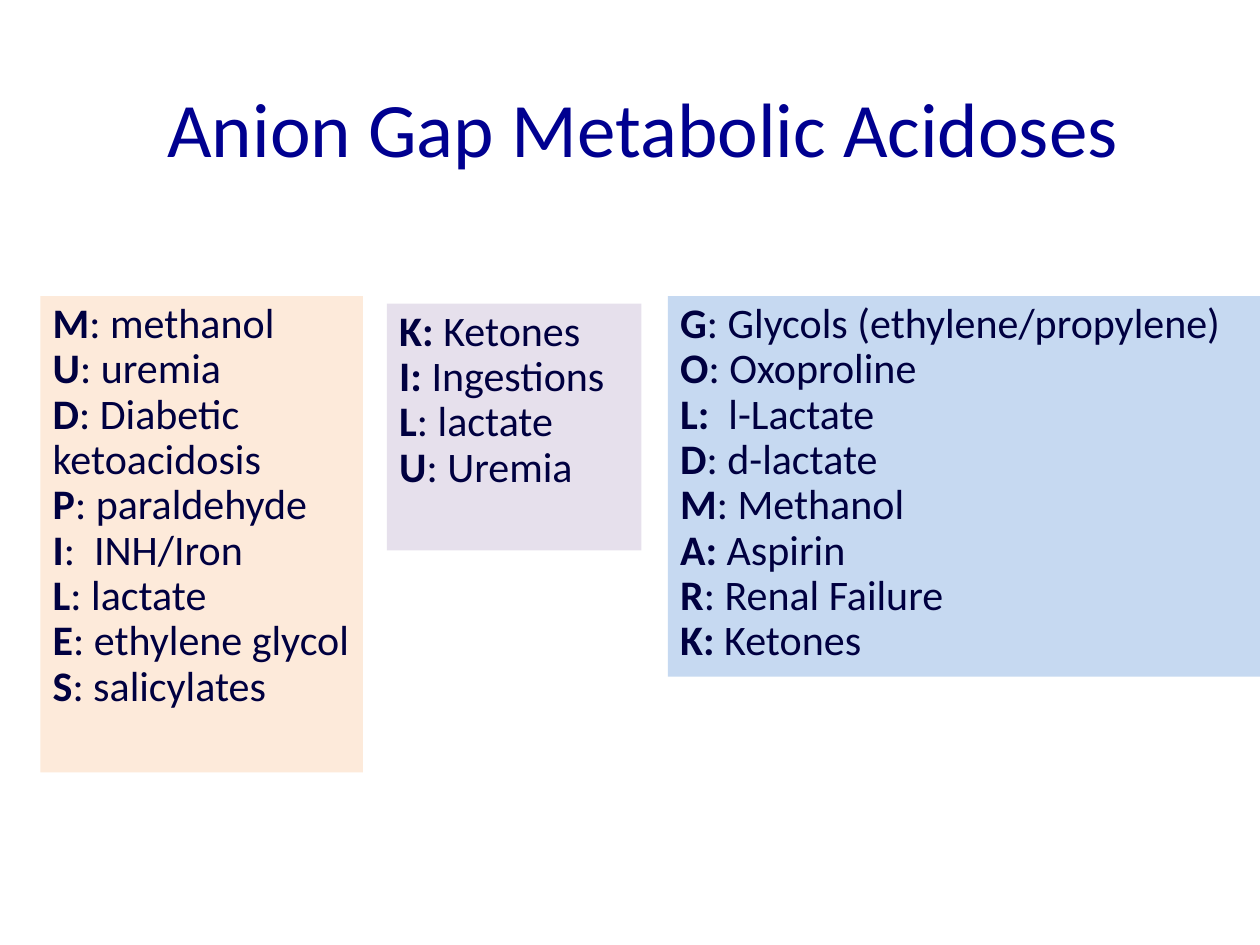
from pptx import Presentation
from pptx.dml.color import RGBColor
from pptx.enum.shapes import MSO_SHAPE
from pptx.enum.text import MSO_ANCHOR, MSO_AUTO_SIZE, PP_ALIGN
from pptx.util import Inches, Pt

RECT = MSO_SHAPE.RECTANGLE
TOP, MIDDLE = MSO_ANCHOR.TOP, MSO_ANCHOR.MIDDLE
LEFT, CENTER = PP_ALIGN.LEFT, PP_ALIGN.CENTER
FIXED = MSO_AUTO_SIZE.NONE

BLUE = RGBColor(0x00, 0x00, 0x90)
NAVY = RGBColor(0x00, 0x00, 0x40)
PEACH = RGBColor(0xFD, 0xEA, 0xDA)
SKY = RGBColor(0xC6, 0xD9, 0xF1)
LILAC = RGBColor(0xE6, 0xE0, 0xEC)

WIDTH, HEIGHT = Inches(10), Inches(7.5)
COLS, ROWS = 100, 75

HEAD = {"name": "Calibri", "size": Pt(44), "bold": False}
BODY = {"name": "Calibri", "size": Pt(24)}

LISTS = [
    (PEACH, (3.2, 23.5, 25.6, 37.8), [
        "M|: methanol", "U|: uremia", "D|: Diabetic ketoacidosis",
        "P|: paraldehyde", "I|:  INH/Iron", "L|: lactate",
        "E|: ethylene glycol", "S|: salicylates"]),
    (SKY, (53, 23.5, 47, 30.2), [
        "G|: Glycols (ethylene/propylene)", "O|: Oxoproline",
        "L:  |l-Lactate", "D|: d-lactate", "M|: Methanol",
        "A: |Aspirin", "R|: Renal Failure", "K:| Ketones"]),
    (LILAC, (30.7, 24.1, 20.2, 19.6), [
        "K:| Ketones", "I: |Ingestions", "L|: lactate", "U|: Uremia"]),
]


def place(left, top, wide, high):
    col, row = WIDTH / COLS, HEIGHT / ROWS
    return [round(n) for n in (left * col, top * row, wide * col, high * row)]


def apply(item, look):
    for key, value in look.items():
        setattr(item, key, value)


def add_run(para, text, look, color):
    run = para.add_run()
    run.text = text
    apply(run.font, look)
    run.font.color.rgb = color


def add_title(slide, text, area):
    frame = slide.shapes.add_textbox(*place(*area)).text_frame
    apply(frame, {"word_wrap": True, "auto_size": FIXED,
                  "vertical_anchor": MIDDLE})
    para = frame.paragraphs[0]
    para.alignment = CENTER
    add_run(para, text, HEAD, BLUE)


def add_list(slide, fill, area, lines):
    box = slide.shapes.add_shape(RECT, *place(*area))
    box.shadow.inherit = False
    box.fill.solid()
    box.fill.fore_color.rgb = fill
    box.line.fill.background()
    frame = box.text_frame
    apply(frame, {"word_wrap": True, "auto_size": FIXED,
                  "vertical_anchor": TOP})
    for i, line in enumerate(lines):
        para = frame.add_paragraph() if i else frame.paragraphs[0]
        apply(para, {"alignment": LEFT, "line_spacing": 0.9})
        key, rest = line.split("|")
        add_run(para, key, BODY | {"bold": True}, NAVY)
        add_run(para, rest, BODY | {"bold": False}, NAVY)


def main():
    deck = Presentation()
    apply(deck, {"slide_width": WIDTH, "slide_height": HEIGHT})
    slide = deck.slides.add_slide(deck.slide_layouts[6])
    add_title(slide, "Anion Gap Metabolic Acidoses", (5, 3.8, 92.1, 12.5))
    for fill, area, lines in LISTS:
        add_list(slide, fill, area, lines)
    deck.save("out.pptx")


if __name__ == "__main__":
    main()
